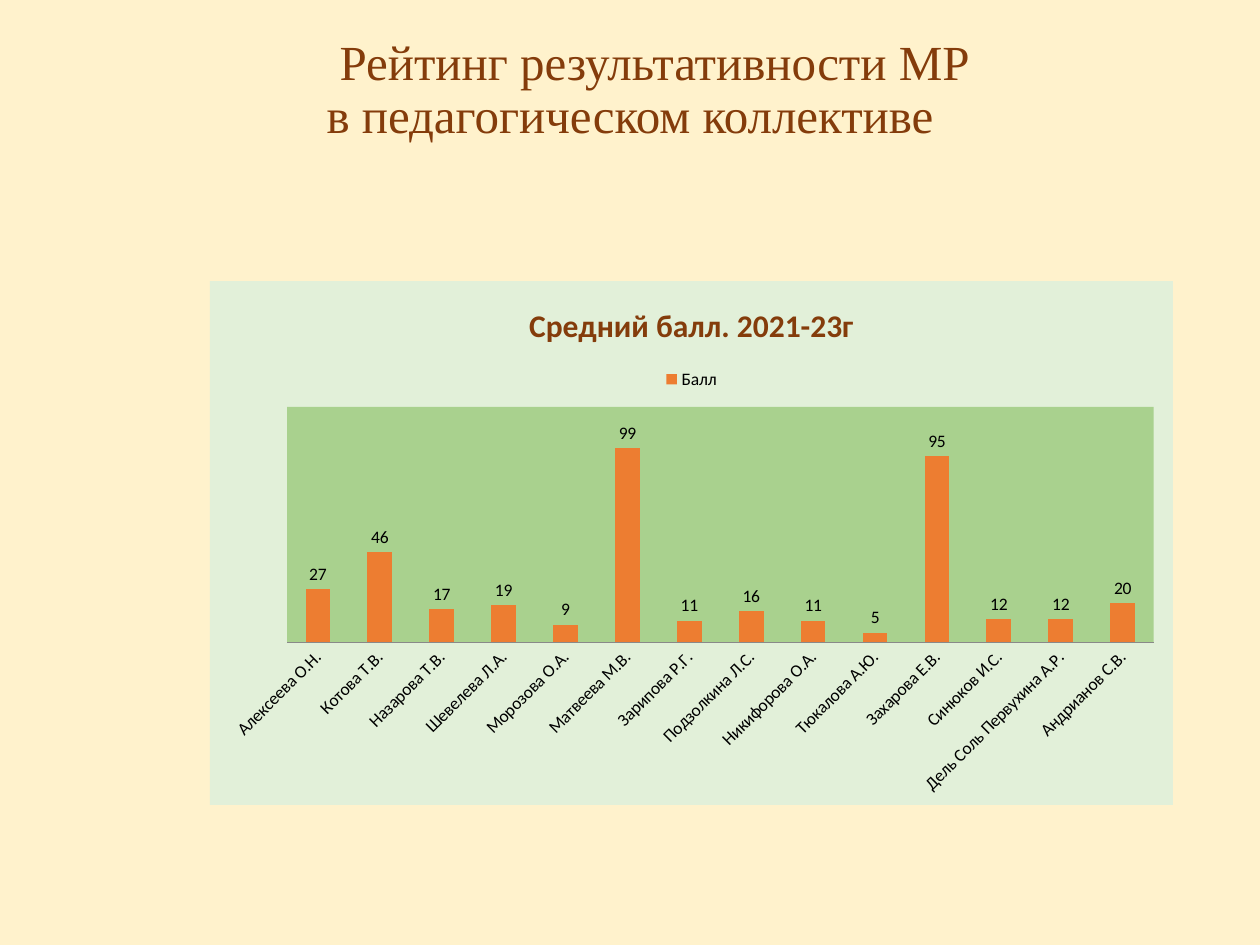
from lxml.etree import SubElement
from pptx import Presentation
from pptx.chart.data import CategoryChartData
from pptx.dml.color import RGBColor
from pptx.enum.chart import XL_CHART_TYPE, XL_LABEL_POSITION, XL_LEGEND_POSITION, XL_TICK_MARK
from pptx.enum.text import MSO_ANCHOR, MSO_AUTO_SIZE, PP_ALIGN
from pptx.oxml import parse_xml
from pptx.oxml.ns import nsdecls, qn
from pptx.util import Emu, Pt

COLORS = {
    "background": "FFF2CC",
    "heading": "843C0B",
    "panel": "E2F0D9",
    "plot": "A9D18E",
    "bar": "ED7D31",
    "axis": "898989",
    "text": "000000",
}
HEADING_LINES = [("Рейтинг результативности МР", 49), ("в педагогическом коллективе", 0)]
SCORES = {
    "Алексеева О.Н.": 27,
    "Котова Т.В.": 46,
    "Назарова Т.В.": 17,
    "Шевелева Л.А.": 19,
    "Морозова О.А.": 9,
    "Матвеева М.В.": 99,
    "Зарипова Р.Г.": 11,
    "Подзолкина Л.С.": 16,
    "Никифорова О.А.": 11,
    "Тюкалова А.Ю.": 5,
    "Захарова Е.В.": 95,
    "Синюков И.С.": 12,
    "Дель Соль Первухина А.Р.": 12,
    "Андрианов С.В.": 20,
}
PLOT_LAYOUT = {"x": 0.08, "y": 0.24, "w": 0.9, "h": 0.45}


def px(length):
    """Turn pixels into EMU."""
    return Emu(round(length * 914400 / 126))


def rgb(name):
    """Look up a palette colour."""
    return RGBColor.from_string(COLORS[name])


def apply(target, values):
    """Set every attribute listed in a dict."""
    for name, value in values.items():
        setattr(target, name, value)


def paint(fill, color):
    """Make a fill solid in a palette colour."""
    fill.solid()
    fill.fore_color.rgb = rgb(color)


def style_font(font, color, **values):
    """Format a font and colour it."""
    apply(font, values)
    font.color.rgb = rgb(color)


def area_format(color):
    """Build borderless shape properties for a chart area."""
    return parse_xml(
        f'<c:spPr {nsdecls("c", "a")}><a:solidFill><a:srgbClr val="{COLORS[color]}"/>'
        "</a:solidFill><a:ln><a:noFill/></a:ln></c:spPr>"
    )


def set_heading(heading):
    """Place and fill the slide title."""
    apply(heading, {"left": px(87), "top": px(19), "width": px(1086), "height": px(145)})
    frame = heading.text_frame
    apply(frame, {
        "text": "\n".join(line for line, _ in HEADING_LINES),
        "word_wrap": True,
        "auto_size": MSO_AUTO_SIZE.NONE,
        "vertical_anchor": MSO_ANCHOR.MIDDLE,
    })
    for paragraph, (_, indent) in zip(frame.paragraphs, HEADING_LINES):
        paragraph._p.get_or_add_pPr().set("marL", str(px(indent)))
        apply(paragraph, {"alignment": PP_ALIGN.CENTER, "line_spacing": 0.9})
        style_font(paragraph.runs[0].font, "heading", name="Times New Roman", size=Pt(28))


def add_score_chart(slide):
    """Add the column chart of average scores."""
    data = CategoryChartData()
    data.categories = list(SCORES)
    data.add_series("Балл", list(SCORES.values()))
    chart = slide.shapes.add_chart(
        XL_CHART_TYPE.COLUMN_CLUSTERED, px(210), px(281), px(963), px(524), data
    ).chart
    style_font(chart.font, "text", name="Calibri", size=Pt(10))
    apply(chart, {"has_title": True, "has_legend": True})
    apply(chart.legend, {"position": XL_LEGEND_POSITION.TOP, "include_in_layout": False})
    caption = chart.chart_title.text_frame
    caption.text = "Средний балл. 2021-23г"
    style_font(caption.paragraphs[0].runs[0].font, "heading", name="Calibri", size=Pt(18), bold=True)
    style_columns(chart.plots[0])
    style_axes(chart)
    style_areas(chart)


def style_columns(columns):
    """Format the columns and their value labels."""
    apply(columns, {"gap_width": 150, "overlap": -25, "vary_by_categories": False,
                    "has_data_labels": True})
    apply(columns.data_labels, {"show_value": True, "position": XL_LABEL_POSITION.OUTSIDE_END})
    paint(columns.series[0].format.fill, "bar")


def style_axes(chart):
    """Slant the names and hide the value scale."""
    names, scale = chart.category_axis, chart.value_axis
    no_ticks = {"major_tick_mark": XL_TICK_MARK.NONE, "minor_tick_mark": XL_TICK_MARK.NONE}
    apply(names, no_ticks)
    apply(scale, {**no_ticks, "visible": False, "has_major_gridlines": False,
                  "minimum_scale": 0, "maximum_scale": 120})
    names.format.line.color.rgb = rgb("axis")
    names.format.line.width = Pt(0.75)
    style_font(names.tick_labels.font, "text", size=Pt(10))
    names._element.find(qn("c:txPr")).find(qn("a:bodyPr")).set("rot", "-2700000")


def style_areas(chart):
    """Fill the chart and plot areas and fix the plot position."""
    space = chart._chartSpace
    space.find(qn("c:chart")).addnext(area_format("panel"))
    plot_area = space.find(qn("c:chart")).find(qn("c:plotArea"))
    plot_area.append(area_format("plot"))
    for layout in plot_area.findall(qn("c:layout")):
        plot_area.remove(layout)
    layout = parse_xml(f'<c:layout {nsdecls("c")}><c:manualLayout/></c:layout>')
    settings = {"layoutTarget": "inner", "xMode": "edge", "yMode": "edge", **PLOT_LAYOUT}
    for tag, value in settings.items():
        SubElement(layout[0], qn(f"c:{tag}")).set("val", str(value))
    plot_area.insert(0, layout)


def main():
    """Build and save the slide."""
    presentation = Presentation()
    apply(presentation, {"slide_width": px(1260), "slide_height": px(945)})
    slide = presentation.slides.add_slide(presentation.slide_layouts[5])
    paint(slide.background.fill, "background")
    set_heading(slide.shapes.title)
    add_score_chart(slide)
    presentation.save("out.pptx")


if __name__ == "__main__":
    main()
